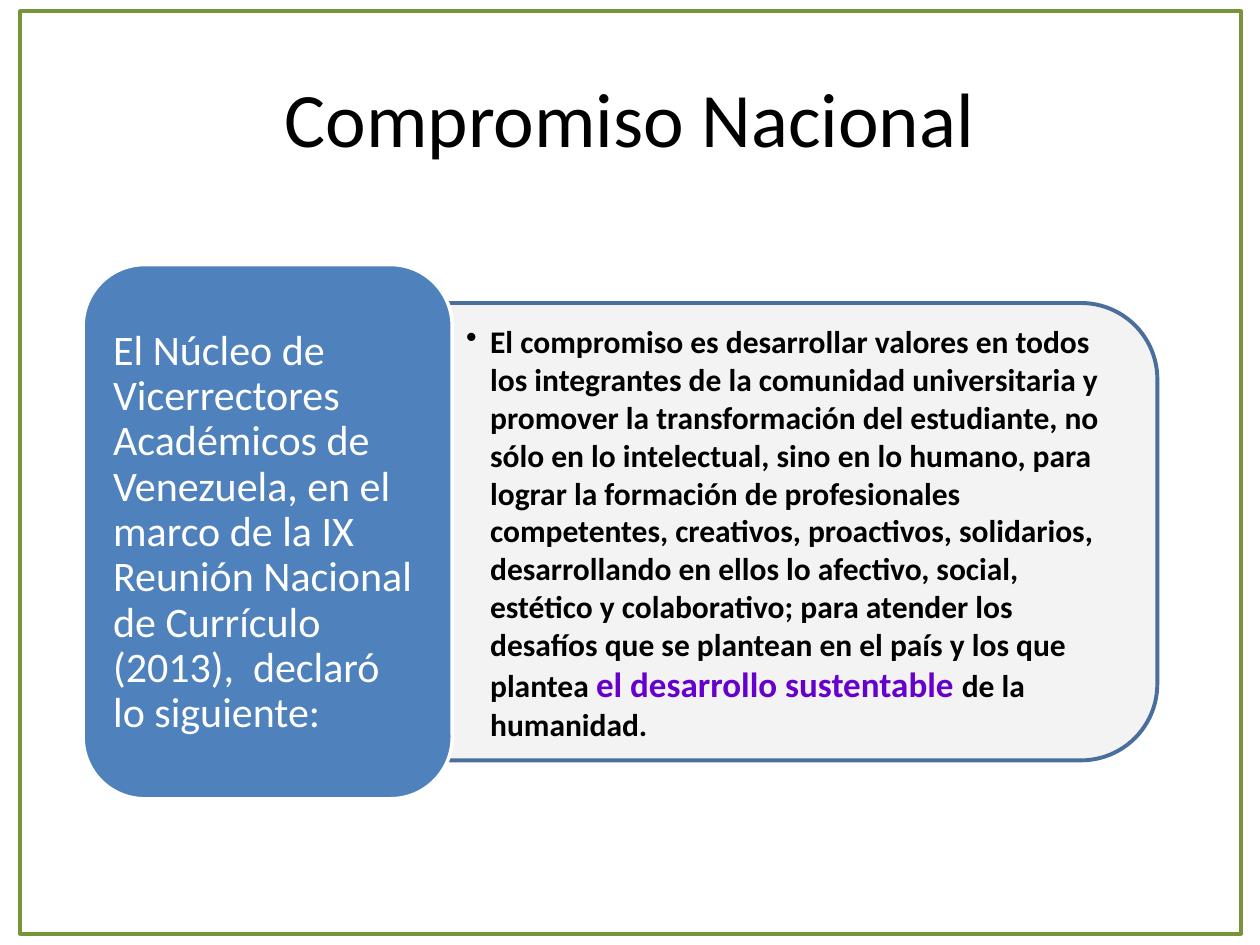
from lxml.etree import SubElement
from pptx import Presentation
from pptx.dml.color import RGBColor
from pptx.enum.shapes import MSO_SHAPE
from pptx.enum.text import MSO_ANCHOR, PP_ALIGN
from pptx.oxml.ns import qn
from pptx.util import Inches, Pt

FONT = "Calibri"
COLORS = {
    "black": "000000",
    "white": "FFFFFF",
    "blue": "4F81BD",
    "dark_blue": "376092",
    "gray": "F2F2F2",
    "green": "77933C",
    "purple": "6600CC",
}
TITLE = "Compromiso Nacional"
SOURCE = ("El Núcleo de Vicerrectores Académicos de Venezuela, en el marco de la IX "
          "Reunión Nacional de Currículo (2013),  declaró lo siguiente:")
COMMITMENT = [
    ("El compromiso es desarrollar valores en todos los integrantes de la comunidad "
     "universitaria y promover la transformación del estudiante, no sólo en lo "
     "intelectual, sino en lo humano, para lograr la formación de profesionales "
     "competentes, creativos, proactivos, solidarios, desarrollando en ellos lo "
     "afectivo, social, estético y colaborativo; para atender los desafíos que se "
     "plantean en el país y los que plantea ", 18, "black"),
    ("el desarrollo sustentable ", 20, "purple"),
    ("de la humanidad.", 18, "black"),
]


def rgb(name):
    return RGBColor.from_string(COLORS[name])


def set_alpha(fill_parent, percent):
    """Make the solid fill directly under an element partly transparent."""
    color = fill_parent.find(qn("a:solidFill"))[0]
    SubElement(color, qn("a:alpha"), val=str(percent * 1000))


def add_panel(slide, kind, box, fill, line, width, rotation=0, alpha=None):
    sp = slide.shapes.add_shape(kind, *map(Inches, box))
    sp.shadow.inherit = False
    sp.rotation = rotation
    if fill:
        sp.fill.solid()
        sp.fill.fore_color.rgb = rgb(fill)
    else:
        sp.fill.background()
    sp.line.color.rgb = rgb(line)
    sp.line.width = Pt(width)
    if alpha:
        sp_pr = sp.fill._xPr
        set_alpha(sp_pr, alpha)
        set_alpha(sp_pr.find(qn("a:ln")), alpha)


def add_text(slide, box, runs, bold=False, margins=(0.1, 0.05)):
    """Add a wrapped, vertically centred paragraph and return it."""
    tf = slide.shapes.add_textbox(*map(Inches, box)).text_frame
    tf.word_wrap = True
    tf.vertical_anchor = MSO_ANCHOR.MIDDLE
    tf.margin_left = tf.margin_right = Inches(margins[0])
    tf.margin_top = tf.margin_bottom = Inches(margins[1])
    p = tf.paragraphs[0]
    for text, size, color in runs:
        r = p.add_run()
        r.text = text
        r.font.name = FONT
        r.font.size = Pt(size)
        r.font.bold = bold
        r.font.color.rgb = rgb(color)
    return p


def add_bullet(p, indent):
    p_pr = p._p.get_or_add_pPr()
    p_pr.set("marL", str(Inches(indent)))
    p_pr.set("indent", str(-Inches(indent)))
    SubElement(p_pr, qn("a:buChar"), char="•")


def main():
    prs = Presentation()
    prs.slide_width, prs.slide_height = Inches(10), Inches(7.5)
    s = prs.slides.add_slide(prs.slide_layouts[6])

    title = add_text(s, (0.5, 0.3, 9, 1.25), [(TITLE, 44, "black")])
    title.alignment = PP_ALIGN.CENTER

    add_panel(s, MSO_SHAPE.ROUND_2_SAME_RECTANGLE, (4.49, 1.34, 3.63, 5.76),
              "gray", "dark_blue", 2.25, rotation=90, alpha=90)
    commitment = add_text(s, (3.43, 2.59, 5.58, 3.27), COMMITMENT,
                          bold=True, margins=(0.27, 0.14))
    add_bullet(commitment, 0.19)

    add_panel(s, MSO_SHAPE.ROUNDED_RECTANGLE, (0.66, 2.1, 2.93, 4.24), "blue", "white", 2)
    source = add_text(s, (0.8, 2.25, 2.64, 3.96), [(SOURCE, 24, "white")])
    source.line_spacing = 0.9

    add_panel(s, MSO_SHAPE.RECTANGLE, (0.16, 0.09, 9.69, 7.32), None, "green", 2.25)
    prs.save("out.pptx")


if __name__ == "__main__":
    main()
